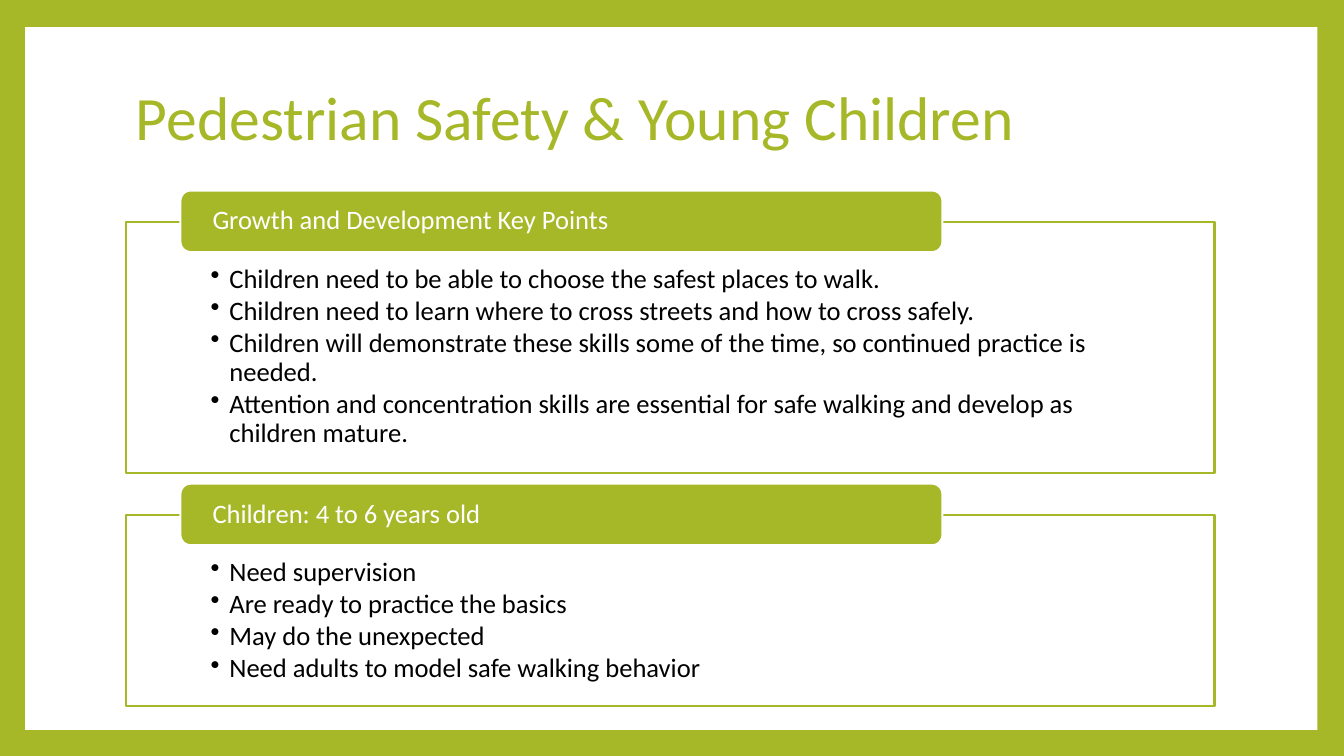
from dataclasses import dataclass

from lxml.etree import SubElement
from pptx import Presentation
from pptx.dml.color import RGBColor
from pptx.enum.shapes import MSO_SHAPE as Preset
from pptx.enum.text import MSO_ANCHOR as Anchor, PP_ALIGN as Align
from pptx.oxml.ns import qn
from pptx.shapes.autoshape import Shape
from pptx.slide import Slide
from pptx.text.text import TextFrame, _Paragraph as Paragraph
from pptx.util import Pt

GREEN = "A6B727"
WHITE = "FFFFFF"
BLACK = "000000"
FONT = "Calibri"
BODY_SIZE = 19
BULLET_INDENT = Pt(13.5)

PANEL_LEFT, PANEL_WIDTH = 90, 777.6
HEADER_LEFT, HEADER_WIDTH, HEADER_HEIGHT = 128.9, 544.3, 44
HEADER_RISE = 22.3


@dataclass
class Section:
    heading: str
    points: list[str]
    top: float
    height: float


SECTIONS = [
    Section("Growth and Development Key Points", [
        "Children need to be able to choose the safest places to walk.",
        "Children need to learn where to cross streets and how to cross safely.",
        "Children will demonstrate these skills some of the time, so continued practice is needed.",
        "Attention and concentration skills are essential for safe walking and develop as "
        "children mature.",
    ], 158.4, 179.2),
    Section("Children: 4 to 6 years old", [
        "Need supervision",
        "Are ready to practice the basics",
        "May do the unexpected",
        "Need adults to model safe walking behavior",
    ], 367.8, 136.8),
]


def colour(value: str) -> RGBColor:
    return RGBColor.from_string(value)


def add_block(page: Slide, preset: Preset, left: float, top: float, width: float,
              height: float, fill: str, line: str | None = None) -> Shape:
    block = page.shapes.add_shape(preset, Pt(left), Pt(top), Pt(width), Pt(height))
    block.shadow.inherit = False
    block.fill.solid()
    block.fill.fore_color.rgb = colour(fill)
    if line:
        block.line.color.rgb = colour(line)
        block.line.width = Pt(1.5)
    else:
        block.line.fill.background()
    return block


def set_frame(frame: TextFrame, anchor: Anchor, side: float, top: float, bottom: float) -> None:
    frame.word_wrap = True
    frame.vertical_anchor = anchor
    frame.margin_left = frame.margin_right = Pt(side)
    frame.margin_top, frame.margin_bottom = Pt(top), Pt(bottom)


def write(para: Paragraph, text: str, size: float, ink: str) -> None:
    para.alignment = Align.LEFT
    para.line_spacing = 0.9
    span = para.add_run()
    span.text = text
    span.font.name = FONT
    span.font.size = Pt(size)
    span.font.color.rgb = colour(ink)


def add_bullet(para: Paragraph) -> None:
    properties = para._p.get_or_add_pPr()
    properties.set("marL", str(BULLET_INDENT))
    properties.set("indent", str(-BULLET_INDENT))
    SubElement(properties, qn("a:buChar")).set("char", "•")


def add_title(page: Slide, text: str) -> None:
    box = page.shapes.add_textbox(Pt(90), Pt(48.2), Pt(777.6), Pt(75.6))
    set_frame(box.text_frame, Anchor.MIDDLE, 7.2, 3.6, 3.6)
    write(box.text_frame.paragraphs[0], text, 44, GREEN)


def add_section(page: Slide, section: Section) -> None:
    """Draw an outlined panel of bullets with its heading tab over the top edge."""
    panel = add_block(page, Preset.RECTANGLE, PANEL_LEFT, section.top,
                      PANEL_WIDTH, section.height, WHITE, GREEN)
    frame = panel.text_frame
    set_frame(frame, Anchor.TOP, 60.4, 31, 10.8)
    for index, point in enumerate(section.points):
        para = frame.add_paragraph() if index else frame.paragraphs[0]
        add_bullet(para)
        para.space_after = Pt(2.5)
        write(para, point, BODY_SIZE, BLACK)

    header = add_block(page, Preset.ROUNDED_RECTANGLE, HEADER_LEFT, section.top - HEADER_RISE,
                       HEADER_WIDTH, HEADER_HEIGHT, GREEN, WHITE)
    set_frame(header.text_frame, Anchor.MIDDLE, 20.8, 0, 0)
    write(header.text_frame.paragraphs[0], section.heading, BODY_SIZE, WHITE)


def main() -> None:
    deck = Presentation()
    deck.slide_width, deck.slide_height = Pt(960), Pt(540)
    page = deck.slides.add_slide(deck.slide_layouts[6])
    page.background.fill.solid()
    page.background.fill.fore_color.rgb = colour(GREEN)
    add_block(page, Preset.RECTANGLE, 18, 19.3, 923, 502, WHITE)
    add_title(page, "Pedestrian Safety & Young Children")
    for section in SECTIONS:
        add_section(page, section)
    deck.save("out.pptx")


if __name__ == "__main__":
    main()
